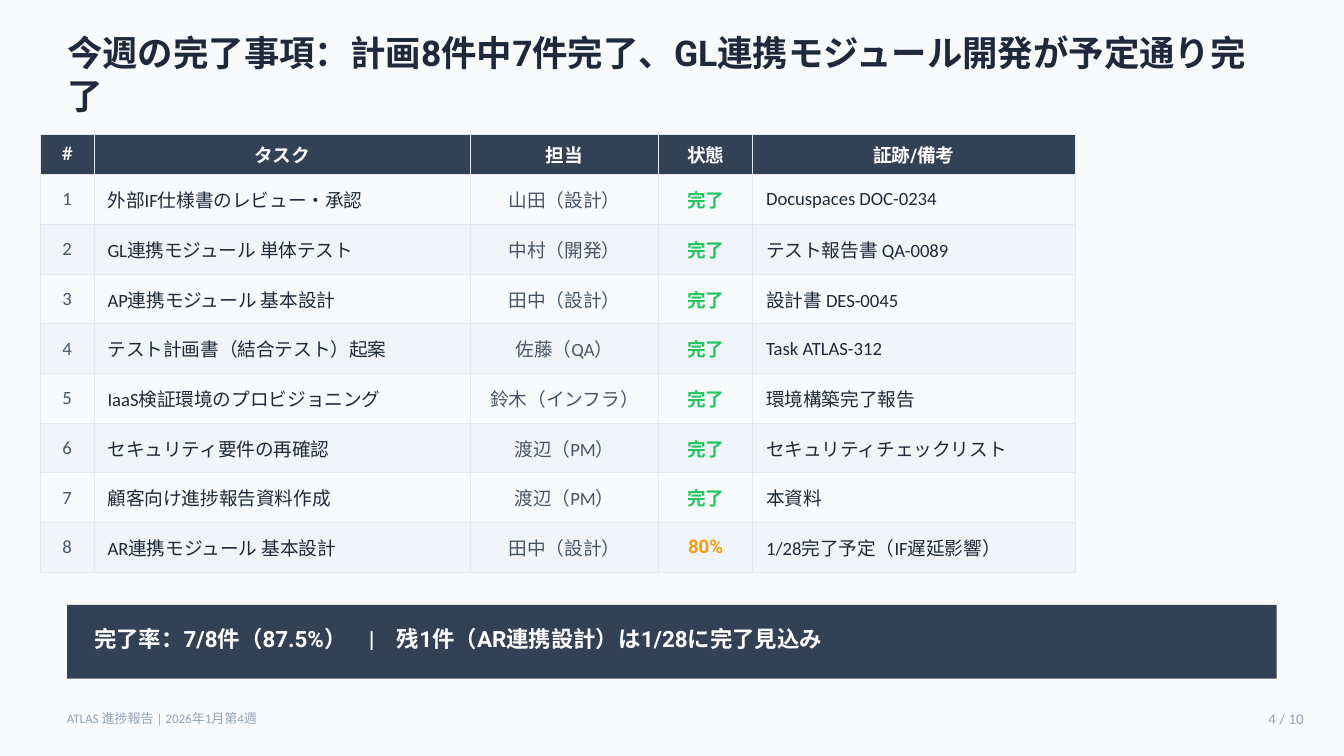
from lxml import etree
from pptx import Presentation
from pptx.dml.color import RGBColor
from pptx.enum.shapes import MSO_SHAPE
from pptx.enum.text import MSO_ANCHOR, MSO_AUTO_SIZE, PP_ALIGN
from pptx.oxml.ns import qn
from pptx.util import Pt

RECT = MSO_SHAPE.RECTANGLE
MIDDLE = MSO_ANCHOR.MIDDLE
FIXED = MSO_AUTO_SIZE.NONE
LEFT, CENTER, RIGHT = PP_ALIGN.LEFT, PP_ALIGN.CENTER, PP_ALIGN.RIGHT

HEAD, BODY = "Roboto", "Calibri"
INK, SLATE, GRAY, MUTED = "1E293B", "334155", "475569", "94A3B8"
WHITE, PAGE, BAND, EDGE = "FFFFFF", "F8FAFC", "F1F5F9", "E2E8F0"
GREEN, AMBER = "22C55E", "F59E0B"

WIDTHS = [28.8, 201.6, 100.8, 50.4, 172.8]
ALIGNS = [CENTER, LEFT, CENTER, CENTER, LEFT]
TITLES = ["#", "タスク", "担当", "状態", "証跡/備考"]
DONE = "完了"
TASKS = [
    ("外部IF仕様書のレビュー・承認", "山田（設計）", DONE, "Docuspaces DOC-0234"),
    ("GL連携モジュール 単体テスト", "中村（開発）", DONE, "テスト報告書 QA-0089"),
    ("AP連携モジュール 基本設計", "田中（設計）", DONE, "設計書 DES-0045"),
    ("テスト計画書（結合テスト）起案", "佐藤（QA）", DONE, "Task ATLAS-312"),
    ("IaaS検証環境のプロビジョニング", "鈴木（インフラ）", DONE, "環境構築完了報告"),
    ("セキュリティ要件の再確認", "渡辺（PM）", DONE, "セキュリティチェックリスト"),
    ("顧客向け進捗報告資料作成", "渡辺（PM）", DONE, "本資料"),
    ("AR連携モジュール 基本設計", "田中（設計）", "80%", "1/28完了予定（IF遅延影響）"),
]


def color(code):
    return RGBColor.from_string(code)


def paint(fill, code):
    fill.solid()
    fill.fore_color.rgb = color(code)


def write(frame, text, size, face, code, bold=False, align=LEFT):
    frame.text = text
    para = frame.paragraphs[0]
    para.alignment = align
    font = para.font
    font.size = Pt(size)
    font.name = face
    font.bold = bold
    font.color.rgb = color(code)


def set_frame(frame, inset=None):
    frame.word_wrap = True
    frame.auto_size = FIXED
    frame.vertical_anchor = MIDDLE
    if inset is not None:
        frame.margin_left = frame.margin_right = Pt(inset)
        frame.margin_top = frame.margin_bottom = Pt(inset)


def add_title(slide, text):
    title = slide.shapes.title
    title.left, title.top = Pt(36), Pt(21.6)
    title.width, title.height = Pt(648), Pt(36)
    set_frame(title.text_frame, 0)
    write(title.text_frame, text, 19, HEAD, INK, True)


def add_text(slide, box, text, size, face, code, bold=False, align=LEFT, inset=None):
    frame = slide.shapes.add_textbox(*map(Pt, box)).text_frame
    set_frame(frame, inset)
    write(frame, text, size, face, code, bold, align)


def add_bar(slide, box):
    bar = slide.shapes.add_shape(RECT, *map(Pt, box))
    bar.shadow.inherit = False
    paint(bar.fill, SLATE)
    bar.line.fill.background()


def add_edges(cell):
    props = cell._tc.get_or_add_tcPr()
    for side in ("lnL", "lnR", "lnT", "lnB"):
        line = etree.SubElement(props, qn("a:" + side), w=str(Pt(0.5)))
        solid = etree.SubElement(line, qn("a:solidFill"))
        etree.SubElement(solid, qn("a:srgbClr"), val=EDGE)


def fill_cell(cell, text, face, code, bold, align, back):
    cell.vertical_anchor = MIDDLE
    add_edges(cell)
    if back:
        paint(cell.fill, back)
    else:
        cell.fill.background()
    write(cell.text_frame, text, 10, face, code, bold, align)


def add_tasks(slide):
    count = len(TASKS) + 1
    high = 21.6 + 26.64 * len(TASKS)
    frame = slide.shapes.add_table(
        count, len(WIDTHS), Pt(21.6), Pt(72), Pt(sum(WIDTHS)), Pt(high))
    table = frame.table
    for col, width in zip(table.columns, WIDTHS):
        col.width = Pt(width)
    for row in table.rows:
        row.height = Pt(26.64)
    table.rows[0].height = Pt(21.6)
    for col, text in enumerate(TITLES):
        fill_cell(table.cell(0, col), text, HEAD, WHITE, True, CENTER, SLATE)
    for num, task in enumerate(TASKS, 1):
        back = BAND if num % 2 == 0 else None
        state = GREEN if task[2] == DONE else AMBER
        codes = [GRAY, INK, GRAY, state, INK]
        for col, text in enumerate((str(num), *task)):
            bold = col == 3
            face = HEAD if bold else BODY
            fill_cell(table.cell(num, col), text, face, codes[col], bold, ALIGNS[col], back)


def main():
    deck = Presentation()
    deck.slide_width, deck.slide_height = Pt(720), Pt(405)
    slide = deck.slides.add_slide(deck.slide_layouts[5])
    paint(slide.background.fill, PAGE)
    add_title(slide, "今週の完了事項：計画8件中7件完了、GL連携モジュール開発が予定通り完了")
    add_tasks(slide)
    add_bar(slide, (36, 324, 648, 39.6))
    add_text(slide, (50.4, 327.6, 619.2, 28.8),
             "完了率：7/8件（87.5%）　|　残1件（AR連携設計）は1/28に完了見込み",
             12, HEAD, WHITE, True, inset=0)
    add_text(slide, (655.2, 375.84, 50.4, 18), "4 / 10", 8, BODY, MUTED, align=RIGHT)
    add_text(slide, (28.8, 375.84, 288, 18), "ATLAS 進捗報告 | 2026年1月第4週", 7, BODY, MUTED)
    deck.save("out.pptx")


if __name__ == "__main__":
    main()
